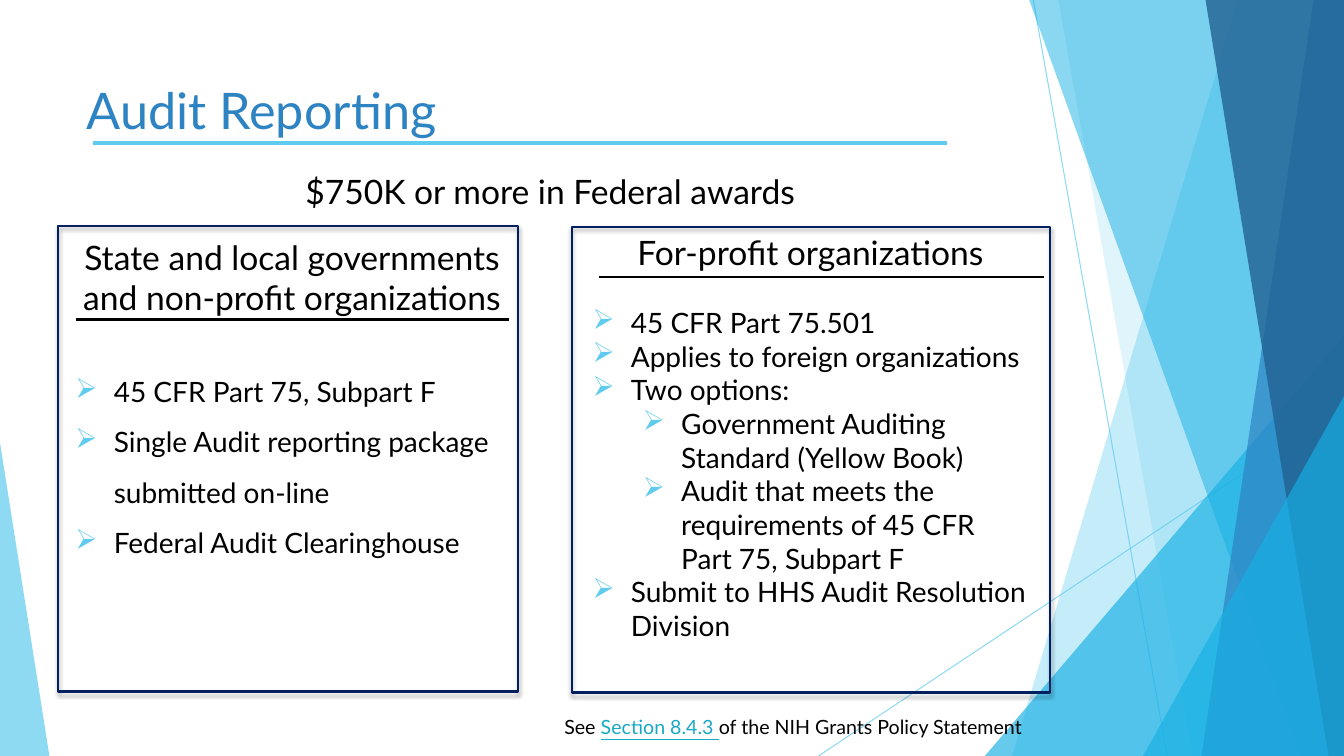
from lxml import etree
from pptx import Presentation, util as u
from pptx.dml.color import RGBColor
from pptx.enum import shapes, text
from pptx.oxml.ns import qn

HUES = {"sky": "5FCBEF", "cyan": "17B0E4", "blue": "2E83C3", "deep": "226292",
        "navy": "002060", "link": "18A9C4", "ink": "000000"}
WIDE, HIGH = u.Inches(13.333), u.Inches(7.5)
LEFT, MID = text.PP_ALIGN.LEFT, text.PP_ALIGN.CENTER


def x(part):
    return u.Emu(round(WIDE * part / 100))


def y(part):
    return u.Emu(round(HIGH * part / 100))


def area(box):
    return x(box[0]), y(box[1]), x(box[2]), y(box[3])


def rgb(name):
    return RGBColor.from_string(HUES[name])


def style(item, **form):
    for key, val in form.items():
        setattr(item, key, val)


def add(top, tag, **form):
    return etree.SubElement(top, qn(tag), {k: str(v) for k, v in form.items()})


def fade(fill, part):
    color = fill._xPr.find(".//" + qn("a:srgbClr"))
    add(color, "a:alpha", val=part * 1000)


def paint(shape, hue, part):
    shape.shadow.inherit = False
    shape.fill.solid()
    shape.fill.fore_color.rgb = rgb(hue)
    fade(shape.fill, part)
    shape.line.fill.background()


def rule(slide, ends, hue, width, part=100):
    a, b, c, d = ends
    line = slide.shapes.add_connector(
        shapes.MSO_CONNECTOR.STRAIGHT, x(a), y(b), x(c), y(d))
    line.line.color.rgb = rgb(hue)
    line.line.width = u.Pt(width)
    if part < 100:
        fade(line.line.fill, part)
    add(line._element.spPr, "a:effectLst")


def write(para, words, size, hue="ink", **form):
    run = para.add_run()
    run.text = words
    style(run.font, name="Lato", size=u.Pt(size), **form)
    run.font.color.rgb = rgb(hue)


def frame(slide, box):
    body = slide.shapes.add_textbox(*area(box)).text_frame
    body.word_wrap = True
    return body


def bullet(para, level):
    props = para._p.get_or_add_pPr()
    props.set("marL", str(u.Inches(0.38 + level / 2)))
    props.set("indent", str(u.Inches(-0.38)))
    add(add(props, "a:buClr"), "a:srgbClr", val=HUES["sky"])
    add(props, "a:buChar", char="➢")


def decor(slide):
    rule(slide, (76.88, 0, 86.85, 100), "sky", 0.75, 70)
    rule(slide, (100, 53.73, 60.9, 100), "sky", 0.75, 70)

    def band(top, foot, hue, part):
        form = slide.shapes.build_freeform(x(top), 0)
        form.add_line_segments(
            [(WIDE, 0), (WIDE, HIGH), (x(foot), HIGH)], close=True)
        paint(form.convert_to_shape(), hue, part)

    def wedge(box, tip, hue, part):
        shape = slide.shapes.add_shape(
            shapes.MSO_SHAPE.ISOSCELES_TRIANGLE, *area(box))
        shape.adjustments[0] = tip
        paint(shape, hue, part)

    band(92.1, 75.3, "sky", 36)
    band(78.75, 88.73, "sky", 20)
    wedge((73.28, 44.4, 26.72, 55.6), 1, "cyan", 66)
    band(76.58, 96.83, "cyan", 50)
    band(97.73, 89.4, "blue", 70)
    band(89.7, 98.85, "deep", 80)
    wedge((85.05, 52.4, 14.95, 47.6), 1, "cyan", 66)
    wedge((0, 58.53, 3.68, 41.47), 0, "sky", 70)


def header(slide, box):
    left, top, wide, high = box
    title = slide.shapes.title
    style(title, **dict(zip(("left", "top", "width", "height"), area(box))))
    body = title.text_frame
    style(body, vertical_anchor=text.MSO_ANCHOR.TOP, word_wrap=True,
          auto_size=text.MSO_AUTO_SIZE.NONE)
    body.paragraphs[0].alignment = LEFT
    write(body.paragraphs[0], "Audit Reporting", 36, "blue")
    rule(slide, (left + 1.2, top + 9.2, left + 64.73, top + 9.2), "sky", 3)
    lead = frame(slide, (left + 11.55, top + 12.27, 48, 6.67)).paragraphs[0]
    lead.alignment = MID
    write(lead, "$750K or more in Federal awards ", 24)


def panel(slide, box, inset, bar, head, items, gap, pace):
    left, top, wide, high = box
    card = slide.shapes.add_shape(shapes.MSO_SHAPE.RECTANGLE, *area(box))
    card.fill.background()
    card.line.color.rgb = rgb("navy")
    card.line.width = u.Pt(1.5)
    card.shadow.inherit = False
    glow = add(card._element.spPr.find(qn("a:effectLst")), "a:outerShdw",
               blurRad=u.Pt(3), dist=u.Pt(2), dir=5400000, rotWithShape=0)
    add(add(glow, "a:srgbClr", val=HUES["ink"]), "a:alpha", val=35000)

    dx, dy, span = inset
    body = frame(slide, (left + dx, top + dy, span, high - dy))
    body.paragraphs[0].alignment = MID
    write(body.paragraphs[0], head, 24)
    for i, (level, words) in enumerate(items):
        para = body.add_paragraph()
        bullet(para, level)
        style(para, line_spacing=pace, space_before=u.Pt(0 if i else gap))
        write(para, words, 20)
    start, stop, drop = bar
    rule(slide, (left + start, top + drop, left + stop, top + drop), "ink", 1.5)


def note(slide, box):
    para = frame(slide, box).paragraphs[0]
    write(para, "See ", 14)
    write(para, "Section 8.4.3 ", 14, "link", underline=True)
    write(para, "of the NIH Grants Policy Statement", 14)


def main():
    deck = Presentation()
    style(deck, slide_width=WIDE, slide_height=HIGH)
    slide = deck.slides.add_slide(deck.slide_layouts[5])
    decor(slide)
    header(slide, (5.7, 9.73, 62.48, 19.2))
    panel(slide, (4.35, 29.87, 34.2, 61.6), (0.53, 0.8, 33.68),
          (1.28, 33.53, 12.4),
          "State and local governments and non-profit organizations",
          [(0, "45 CFR Part 75, Subpart F"),
           (0, "Single Audit reporting package submitted on-line"),
           (0, "Federal Audit Clearinghouse")], 28.8, 1.5)
    panel(slide, (42.53, 30, 35.63, 61.6), (0.82, 0, 33.9),
          (2.02, 35.17, 6.67),
          "For-profit organizations",
          [(0, "45 CFR Part 75.501"),
           (0, "Applies to foreign organizations"),
           (0, "Two options:"),
           (1, "Government Auditing Standard (Yellow Book)"),
           (1, "Audit that meets the requirements of 45 CFR Part 75, Subpart F"),
           (0, "Submit to HHS Audit Resolution Division")], 24, 1.0)
    note(slide, (41.25, 93.87, 38.4, 4.53))
    deck.save("out.pptx")


if __name__ == "__main__":
    main()
